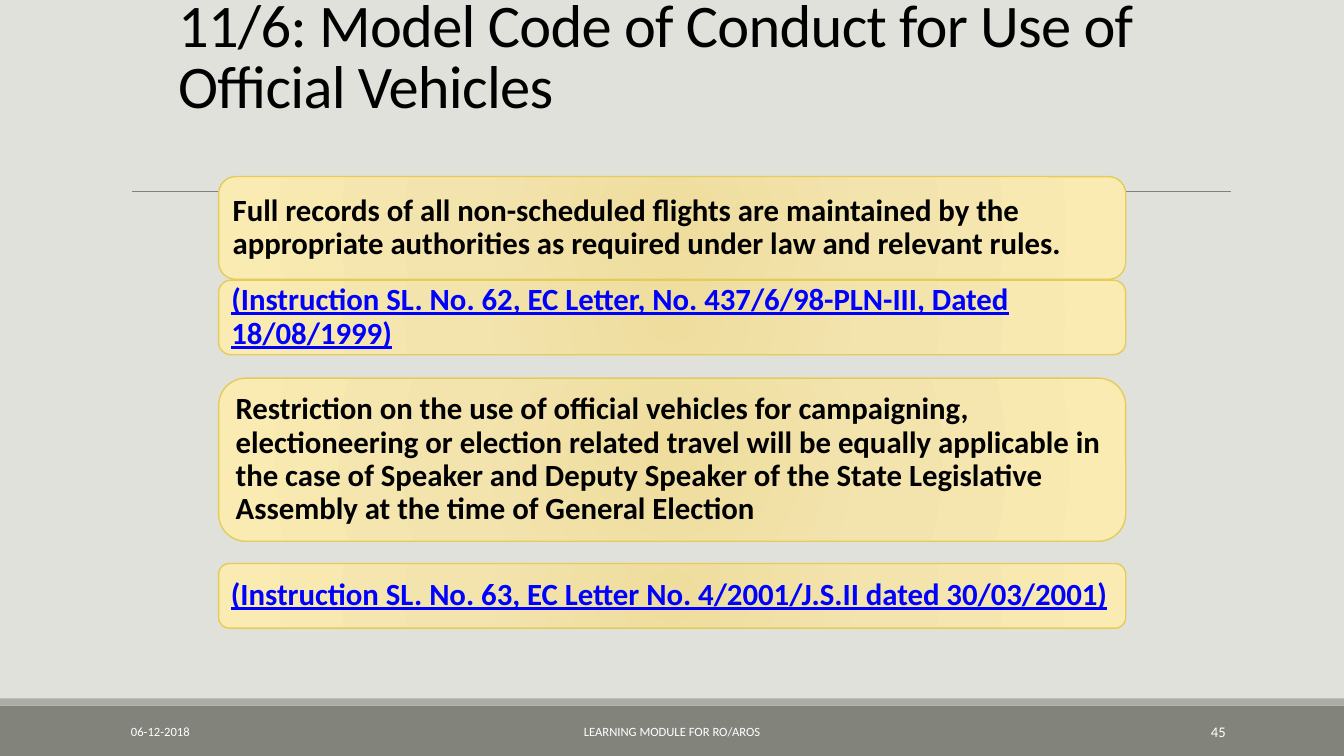
from lxml import etree
from pptx import Presentation
from pptx import util as u
from pptx.dml.color import RGBColor
from pptx.enum import shapes, text
from pptx.oxml import parse_xml
from pptx.oxml.ns import nsdecls, qn

COLORS = {
    "background": "E1E1DB", "footer": "82847C", "strip": "ACADA8", "rule": "808080",
    "border": "E3CC5A", "text": "000000", "link": "0000FF", "light": "FFFFFF",
}
BOX_GRADIENT = [(0, "EEDD9D"), (45, "F3E4AE"), (100, "FAEBB2")]
BOX_LEFT, BOX_WIDTH, BOX_INSET = 5.51, 22.86, 0.23

BODY = {"size": u.Pt(22), "bold": True}
LINK = {**BODY, "underline": True}

# Top, height, wording, colour and format of each box
BOXES = [
    (4.45, 2.59, "Full records of all non-scheduled flights are maintained by the "
     "appropriate authorities as required under law and relevant rules.", "text", BODY),
    (7.06, 1.88, "(Instruction SL. No. 62, EC Letter, No. 437/6/98-PLN-III, "
     "Dated 18/08/1999)", "link", LINK),
    (9.53, 4.11, "Restriction on the use of official vehicles for campaigning, "
     "electioneering or election related travel will be equally applicable in the case of "
     "Speaker and Deputy Speaker of the State Legislative Assembly at the time of "
     "General Election", "text", BODY),
    (14.2, 1.63, "(Instruction SL. No. 63, EC Letter No. 4/2001/J.S.II dated 30/03/2001)",
     "link", LINK),
]

# Left, width, wording, size and alignment of each footer field
FOOTERS = [
    (3.05, 6.86, "06-12-2018", 9, text.PP_ALIGN.LEFT),
    (10.24, 13.39, "LEARNING MODULE FOR RO/AROS", 9, text.PP_ALIGN.CENTER),
    (27.51, 3.63, "45", 10.5, text.PP_ALIGN.RIGHT),
]


def rgb(name):
    return RGBColor.from_string(COLORS[name])


def cm(*lengths):
    return [u.Cm(length) for length in lengths]


def write(sp, wording, color, font, anchor=text.MSO_ANCHOR.MIDDLE,
          align=text.PP_ALIGN.LEFT, line_spacing=1.0):
    tf = sp.text_frame
    tf.word_wrap = True
    tf.vertical_anchor = anchor
    p = tf.paragraphs[0]
    p.alignment = align
    p.line_spacing = line_spacing
    r = p.add_run()
    r.text = wording
    r.font.name = "Calibri"
    r.font.color.rgb = rgb(color)
    for key, value in font.items():
        setattr(r.font, key, value)
    return r


def add_text(s, at, *args, **kwargs):
    return write(s.shapes.add_textbox(*cm(*at)), *args, **kwargs)


def add_band(s, top, height, color, width):
    sp = s.shapes.add_shape(shapes.MSO_SHAPE.RECTANGLE, 0, u.Cm(top), width, u.Cm(height))
    sp.shadow.inherit = False
    sp.fill.solid()
    sp.fill.fore_color.rgb = rgb(color)
    sp.line.fill.background()


def add_rule(s, left, right, y):
    line = s.shapes.add_connector(shapes.MSO_CONNECTOR.STRAIGHT, *cm(left, y, right, y))
    line.line.color.rgb = rgb("rule")
    line.line.width = u.Pt(0.5)
    etree.SubElement(line._element.spPr, qn("a:effectLst"))


def fill_radial(sp, stops):
    """Circular gradient, which python-pptx has no method for."""
    gs = "".join(f'<a:gs pos="{pos * 1000}"><a:srgbClr val="{color}"/></a:gs>'
                 for pos, color in stops)
    sp._element.spPr.find(qn("a:prstGeom")).addnext(parse_xml(
        f'<a:gradFill {nsdecls("a")} rotWithShape="1"><a:gsLst>{gs}</a:gsLst>'
        '<a:path path="circle"><a:fillToRect l="100000" t="100000" r="100000" b="100000"/>'
        '</a:path></a:gradFill>'))


def add_box(s, top, height, wording, color, font):
    sp = s.shapes.add_shape(shapes.MSO_SHAPE.ROUNDED_RECTANGLE,
                            *cm(BOX_LEFT, top, BOX_WIDTH, height))
    sp.shadow.inherit = False
    fill_radial(sp, BOX_GRADIENT)
    sp.line.color.rgb = rgb("border")
    sp.line.width = u.Pt(1)
    for side in ("left", "top", "right", "bottom"):
        setattr(sp.text_frame, f"margin_{side}", u.Cm(BOX_INSET))
    write(sp, wording, color, font, line_spacing=0.9)


def main():
    prs = Presentation()
    prs.slide_width, prs.slide_height = cm(33.87, 19.05)
    s = prs.slides.add_slide(prs.slide_layouts[6])
    s.background.fill.solid()
    s.background.fill.fore_color.rgb = rgb("background")

    # Footer bands and title rule
    add_band(s, 17.78, 1.27, "footer", prs.slide_width)
    add_band(s, 17.6, 0.18, "strip", prs.slide_width)
    add_rule(s, 3.33, 31.01, 4.83)

    # Title, with slightly tightened letters
    r = add_text(s, (4.24, 0, 25.4, 3.18),
                 "11/6: Model Code of Conduct for Use of Official Vehicles", "text",
                 {"size": u.Pt(43.2)}, anchor=text.MSO_ANCHOR.BOTTOM, line_spacing=0.85)
    r.font._element.set("spc", "-50")

    # Instruction boxes
    for box in BOXES:
        add_box(s, *box)

    # Footer fields
    for left, width, wording, size, align in FOOTERS:
        add_text(s, (left, 17.93, width, 1.02), wording, "light",
                 {"size": u.Pt(size)}, align=align)

    prs.save("out.pptx")


if __name__ == "__main__":
    main()
